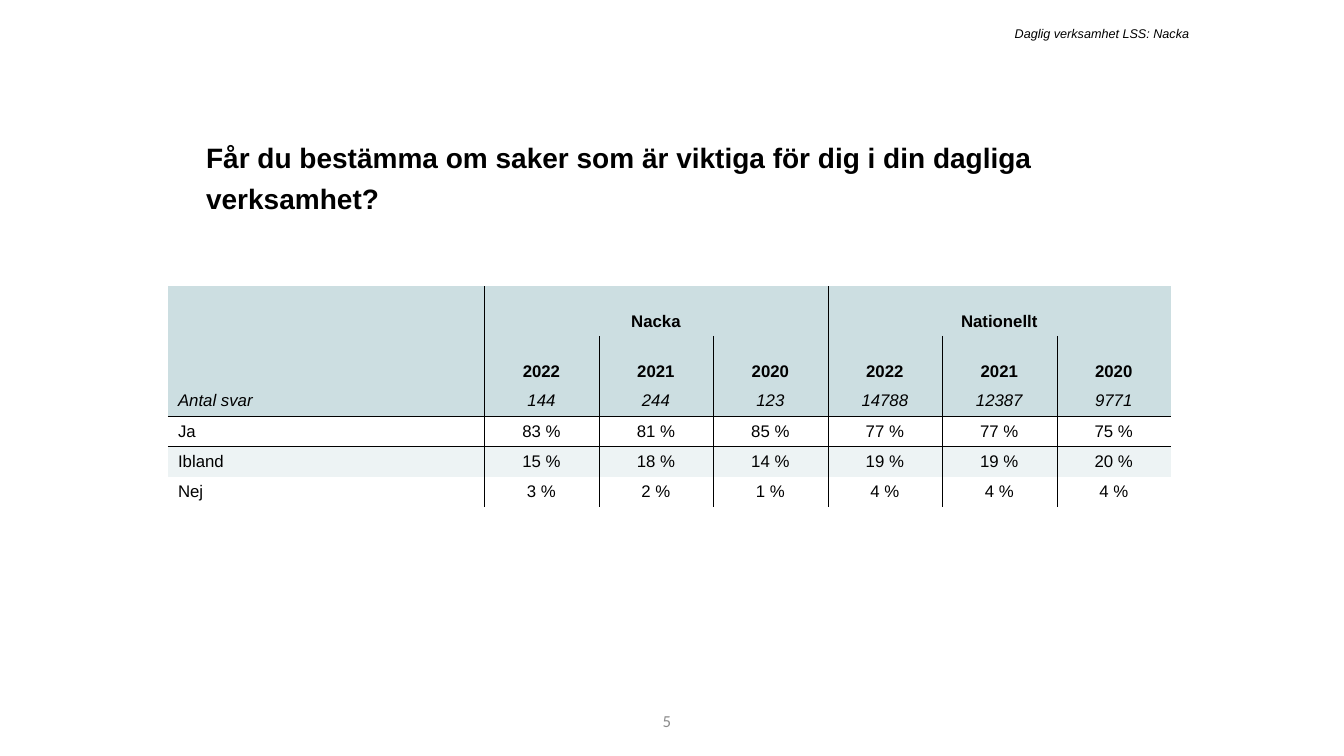
import pptx
import pptx.dml.color
import pptx.enum.text
import pptx.oxml
import pptx.oxml.ns
import pptx.util

ALIGN = pptx.enum.text.PP_ALIGN
ANCHOR = pptx.enum.text.MSO_ANCHOR
PLAIN_TABLE_STYLE = "{2D5ABB26-0587-4C30-8999-92F81FD0307C}"
THEME = {
    "font": "Arial",
    "number_font": "Calibri",
    "ink": "000000",
    "number_ink": "8C8C8C",
    "header_fill": "CCDEE1",
    "band_fill": "EDF3F4",
    "title_size": 20,
    "table_size": 12,
    "caption_size": 9,
    "border_width": 0.25,
}


def px(length):
    return pptx.util.Emu(round(length * 914400 / 100.8))


def write(text_frame, text, size, align, font=THEME["font"], ink=THEME["ink"],
          bold=False, italic=False):
    """Put one formatted paragraph in a text frame and return it."""
    text_frame.word_wrap = True
    text_frame.text = text
    paragraph = text_frame.paragraphs[0]
    paragraph.alignment = align
    for run in paragraph.runs:
        run.font.name = font
        run.font.size = pptx.util.Pt(size)
        run.font.bold = bold
        run.font.italic = italic
        run.font.color.rgb = pptx.dml.color.RGBColor.from_string(ink)
    return paragraph


presentation = pptx.Presentation()
presentation.slide_width = px(1344)
presentation.slide_height = px(756)
slide = presentation.slides.add_slide(presentation.slide_layouts[5])

# Title
title = slide.shapes.title
title.left, title.top, title.width, title.height = px(196), px(129), px(948), px(88)
title.text_frame.auto_size = pptx.enum.text.MSO_AUTO_SIZE.SHAPE_TO_FIT_TEXT
title.text_frame.vertical_anchor = ANCHOR.TOP
question = write(
    title.text_frame,
    "Får du bestämma om saker som är viktiga för dig i din dagliga verksamhet?",
    THEME["title_size"], ALIGN.LEFT, bold=True)
question.line_spacing = 1.2

# Caption and slide number
caption = slide.shapes.add_textbox(px(306), px(21), px(893), px(25))
write(caption.text_frame, "Daglig verksamhet LSS: Nacka", THEME["caption_size"],
      ALIGN.RIGHT, italic=True)
slide_number = slide.shapes.add_textbox(px(379), px(701), px(302), px(40))
slide_number.text_frame.vertical_anchor = ANCHOR.MIDDLE
write(slide_number.text_frame, "5", THEME["table_size"], ALIGN.RIGHT,
      font=THEME["number_font"], ink=THEME["number_ink"])

# Answer table
answers = [
    ["", "Nacka", "", "", "Nationellt", "", ""],
    ["", "2022", "2021", "2020", "2022", "2021", "2020"],
    ["Antal svar", "144", "244", "123", "14788", "12387", "9771"],
    ["Ja", "83 %", "81 %", "85 %", "77 %", "77 %", "75 %"],
    ["Ibland", "15 %", "18 %", "14 %", "19 %", "19 %", "20 %"],
    ["Nej", "3 %", "2 %", "1 %", "4 %", "4 %", "4 %"],
]
column_widths = [316] + [115, 114] * 3
row_heights = [50] * 2 + [30] * 4
count_row = 2
band_row = 4
group_columns = (1, 4)

frame = slide.shapes.add_table(
    len(row_heights), len(column_widths), px(168), px(286),
    px(sum(column_widths)), px(sum(row_heights)))
frame._element.xpath(".//a:tableStyleId")[0].text = PLAIN_TABLE_STYLE
table = frame.table
table.first_row = False
table.horz_banding = False
for column, width in zip(table.columns, column_widths):
    column.width = px(width)
for row, height in zip(table.rows, row_heights):
    row.height = px(height)
for first in group_columns:
    table.cell(0, first).merge(table.cell(0, first + 2))

for row_index, values in enumerate(answers):
    dividers = group_columns if row_index == 0 else range(1, len(values))
    for column_index, value in enumerate(values):
        cell = table.cell(row_index, column_index)
        borders = {
            "lnL": column_index in dividers,
            "lnR": column_index + 1 in dividers,
            "lnT": row_index == count_row + 1,
            "lnB": row_index == count_row,
        }
        properties = cell._tc.get_or_add_tcPr()
        for side, drawn in borders.items():
            if drawn:
                properties.append(pptx.oxml.parse_xml(
                    f'<a:{side} {pptx.oxml.ns.nsdecls("a")} '
                    f'w="{pptx.util.Pt(THEME["border_width"])}"><a:solidFill>'
                    f'<a:srgbClr val="{THEME["ink"]}"/></a:solidFill></a:{side}>'))

        if row_index <= count_row or row_index == band_row:
            fill = THEME["band_fill" if row_index == band_row else "header_fill"]
            cell.fill.solid()
            cell.fill.fore_color.rgb = pptx.dml.color.RGBColor.from_string(fill)
        else:
            cell.fill.background()

        heading = row_index < count_row
        cell.vertical_anchor = ANCHOR.BOTTOM if heading else ANCHOR.MIDDLE
        write(cell.text_frame, value, THEME["table_size"],
              ALIGN.CENTER if column_index else ALIGN.LEFT,
              bold=heading, italic=row_index == count_row)

presentation.save("out.pptx")
